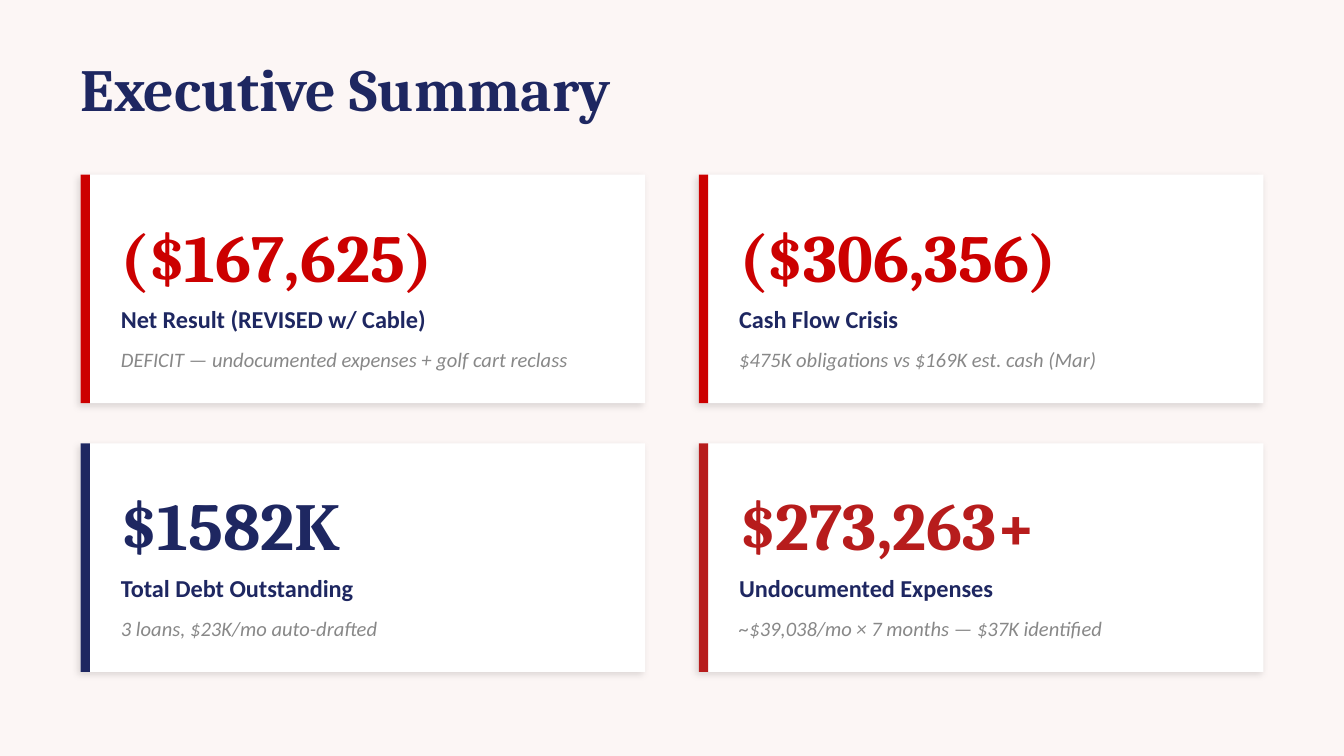
import dataclasses

import lxml.etree
import pptx
import pptx.dml.color
import pptx.enum.shapes
import pptx.enum.text
import pptx.oxml.ns
import pptx.util
from pptx.util import Inches

NAVY = "1E2761"
RED = "CC0000"
CRIMSON = "B71C1C"
GRAY = "888888"
WHITE = "FFFFFF"
CREAM = "FCF6F5"

SLIDE_WIDTH = 10
SLIDE_HEIGHT = SLIDE_WIDTH * 9 / 16
MARGIN, CARDS_TOP = 0.6, 1.3
CARD_WIDTH, CARD_HEIGHT = 4.2, 1.7
COLUMN_STEP, ROW_STEP = 4.6, 2.0
COLUMNS = 2
ACCENT_WIDTH = 0.07
TEXT_INSET, TEXT_WIDTH = 0.3, 3.6


@dataclasses.dataclass(frozen=True)
class Metric:
    figure: str
    label: str
    detail: str
    accent: str


METRICS = [
    Metric("($167,625)", "Net Result (REVISED w/ Cable)",
           "DEFICIT — undocumented expenses + golf cart reclass", RED),
    Metric("($306,356)", "Cash Flow Crisis",
           "$475K obligations vs $169K est. cash (Mar)", RED),
    Metric("$1582K", "Total Debt Outstanding",
           "3 loans, $23K/mo auto-drafted", NAVY),
    Metric("$273,263+", "Undocumented Expenses",
           "~$39,038/mo × 7 months — $37K identified", CRIMSON),
]


def paint(color_format, color: str) -> None:
    color_format.rgb = pptx.dml.color.RGBColor.from_string(color)


def write_text(holder, text: str, *, size: float, color: str,
               font: str = "Calibri", bold: bool = False,
               italic: bool = False) -> None:
    frame = holder.text_frame
    frame.word_wrap = True
    frame.auto_size = pptx.enum.text.MSO_AUTO_SIZE.NONE
    frame.vertical_anchor = pptx.enum.text.MSO_ANCHOR.MIDDLE
    frame.margin_left = frame.margin_right = 0
    frame.margin_top = frame.margin_bottom = 0
    paragraph = frame.paragraphs[0]
    paragraph.alignment = pptx.enum.text.PP_ALIGN.LEFT
    run = paragraph.add_run()
    run.text = text
    run.font.name = font
    run.font.size = pptx.util.Pt(size)
    run.font.bold = bold
    run.font.italic = italic
    paint(run.font.color, color)


def add_rectangle(slide, left: float, top: float, width: float,
                  height: float, color: str):
    rectangle = slide.shapes.add_shape(
        pptx.enum.shapes.MSO_SHAPE.RECTANGLE,
        Inches(left), Inches(top), Inches(width), Inches(height))
    rectangle.shadow.inherit = False
    rectangle.fill.solid()
    paint(rectangle.fill.fore_color, color)
    rectangle.line.fill.background()
    return rectangle


def add_soft_shadow(card) -> None:
    qn = pptx.oxml.ns.qn
    effects = card._element.spPr.find(qn("a:effectLst"))
    shadow = lxml.etree.SubElement(
        effects, qn("a:outerShdw"), blurRad=str(pptx.util.Pt(4)),
        dist=str(pptx.util.Pt(2)), dir=str(135 * 60000),
        algn="bl", rotWithShape="0")
    black = lxml.etree.SubElement(shadow, qn("a:srgbClr"), val="000000")
    lxml.etree.SubElement(black, qn("a:alpha"), val="12000")


def add_metric(slide, metric: Metric, left: float, top: float) -> None:
    card = add_rectangle(slide, left, top, CARD_WIDTH, CARD_HEIGHT, WHITE)
    add_soft_shadow(card)
    add_rectangle(slide, left, top, ACCENT_WIDTH, CARD_HEIGHT, metric.accent)
    lines = [
        (metric.figure, 0.2, 0.8, dict(size=36, color=metric.accent,
                                       font="Cambria", bold=True)),
        (metric.label, 0.9, 0.35, dict(size=13, color=NAVY, bold=True)),
        (metric.detail, 1.2, 0.35, dict(size=11, color=GRAY, italic=True)),
    ]
    for text, offset, height, style in lines:
        line = slide.shapes.add_textbox(
            Inches(left + TEXT_INSET), Inches(top + offset),
            Inches(TEXT_WIDTH), Inches(height))
        write_text(line, text, **style)


def main() -> None:
    deck = pptx.Presentation()
    deck.slide_width = Inches(SLIDE_WIDTH)
    deck.slide_height = Inches(SLIDE_HEIGHT)
    slide = deck.slides.add_slide(deck.slide_layouts.get_by_name("Title Only"))
    slide.background.fill.solid()
    paint(slide.background.fill.fore_color, CREAM)

    heading = slide.shapes.title
    heading.left, heading.top = Inches(MARGIN), Inches(0.3)
    heading.width, heading.height = Inches(8.8), Inches(0.7)
    write_text(heading, "Executive Summary", size=32, color=NAVY,
               font="Cambria", bold=True)

    for index, metric in enumerate(METRICS):
        row, column = divmod(index, COLUMNS)
        add_metric(slide, metric, MARGIN + column * COLUMN_STEP,
                   CARDS_TOP + row * ROW_STEP)

    deck.save("out.pptx")


if __name__ == "__main__":
    main()
